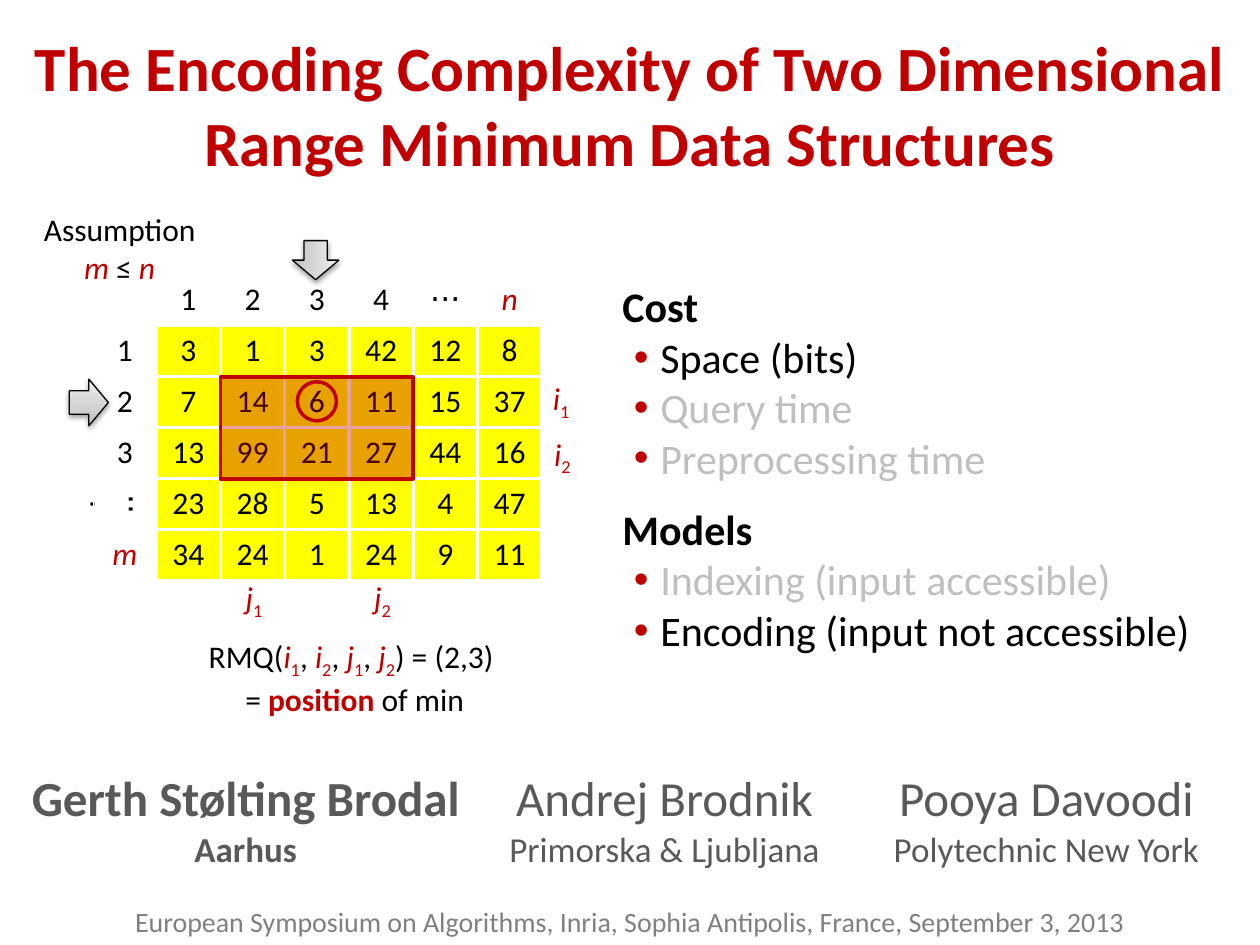
import lxml.etree
import pptx
import pptx.dml.color
import pptx.enum.shapes
import pptx.enum.text
import pptx.oxml
import pptx.oxml.ns
import pptx.util

Inches = pptx.util.Inches
Pt = pptx.util.Pt
SHAPE = pptx.enum.shapes.MSO_SHAPE
ALIGN = pptx.enum.text.PP_ALIGN
NAMESPACE = pptx.oxml.ns.nsdecls("a")

FONT = "Calibri"
RED, BLACK, WHITE, YELLOW = "C00000", "000000", "FFFFFF", "FFFF00"
GREY, DARK_GREY = "808080", "595959"

GRID_LEFT, GRID_TOP = 0.74, 2.18
LABEL_WIDTH, CELL_WIDTH, CELL_HEIGHT = 0.5, 0.51, 0.405
MATRIX = [
    ["", "1", "2", "3", "4", "⋅⋅⋅", "n"],
    ["1", "3", "1", "3", "42", "12", "8"],
    ["2", "7", "14", "6", "11", "15", "37"],
    ["3", "13", "99", "21", "27", "44", "16"],
    ["⋅⋅⋅", "23", "28", "5", "13", "4", "47"],
    ["m", "34", "24", "1", "24", "9", "11"],
]
AUTHORS = [
    ["Gerth Stølting Brodal", "Andrej Brodnik", "Pooya Davoodi"],
    ["Aarhus", "Primorska & Ljubljana", "Polytechnic New York"],
]
TOPICS = {
    "Cost": ["Space (bits)", "Query time", "Preprocessing time"],
    "Models": ["Indexing (input accessible)", "Encoding (input not accessible)"],
}


def rgb(color):
    return pptx.dml.color.RGBColor.from_string(color)


def box(left, top, width, height):
    return Inches(left), Inches(top), Inches(width), Inches(height)


def append_xml(parent, markup):
    parent.append(pptx.oxml.parse_xml(markup.replace(">", f" {NAMESPACE}>", 1)))


def format_run(run, size, color, bold=False, italic=False):
    font = run.font
    font.name, font.size = FONT, Pt(size)
    font.bold, font.italic = bold, italic
    font.color.rgb = rgb(color)


def write_line(paragraph, text, size, color, bold=False, italic=False, align=ALIGN.CENTER):
    paragraph.text = text
    paragraph.alignment = align
    format_run(paragraph.runs[0], size, color, bold, italic)


def write_formula(paragraph, pieces, align=ALIGN.CENTER):
    """Write (text, role) pieces; the roles are plain, var, sub and strong."""
    paragraph.alignment = align
    for text, role in pieces:
        run = paragraph.add_run()
        run.text = text
        format_run(run, 18, BLACK if role == "plain" else RED, role == "strong", role == "var")
        if role == "sub":
            run.font._element.set("baseline", "-25000")


def indexed(name, index):
    return [(name, "var"), (index, "sub")]


def add_text(slide, *place):
    frame = slide.shapes.add_textbox(*box(*place)).text_frame
    frame.word_wrap = True
    return frame


def add_formula(slide, place, lines, align=ALIGN.CENTER):
    frame = add_text(slide, *place)
    for number, pieces in enumerate(lines):
        paragraph = frame.add_paragraph() if number else frame.paragraphs[0]
        write_formula(paragraph, pieces, align)


def add_plain_table(slide, place, rows, widths, heights):
    table = slide.shapes.add_table(len(rows), len(rows[0]), *box(*place)).table
    table.first_row = table.horz_banding = False
    for column, width in zip(table.columns, widths):
        column.width = Inches(width)
    for row, height in zip(table.rows, heights):
        row.height = Inches(height)
    for cell in table.iter_cells():
        cell.fill.background()
    return table


def add_borders(cell, color, width):
    """Put the four border lines ahead of the cell's fill, as the schema asks."""
    properties = cell._tc.get_or_add_tcPr()
    for position, side in enumerate(("lnL", "lnR", "lnT", "lnB")):
        properties.insert(position, pptx.oxml.parse_xml(
            f'<a:{side} {NAMESPACE} w="{Pt(width)}"><a:solidFill>'
            f'<a:srgbClr val="{color}"/></a:solidFill></a:{side}>'))


def add_matrix(slide):
    widths = [LABEL_WIDTH] + [CELL_WIDTH] * 6
    heights = [CELL_HEIGHT] * len(MATRIX)
    table = add_plain_table(
        slide, (GRID_LEFT, GRID_TOP, sum(widths), sum(heights)), MATRIX, widths, heights)
    for r, row in enumerate(MATRIX):
        for c, entry in enumerate(row):
            cell = table.cell(r, c)
            if r and c:
                cell.fill.solid()
                cell.fill.fore_color.rgb = rgb(YELLOW)
                add_borders(cell, WHITE, 2.25)
            if entry:
                is_size = entry in ("m", "n")
                write_line(cell.text_frame.paragraphs[0], entry, 18,
                           RED if is_size else BLACK, italic=is_size)
    table.cell(4, 0)._tc.get_or_add_tcPr().set("vert", "vert")


def add_authors(slide):
    widths, heights = [3.82, 2.83, 3.23], [0.45, 0.41]
    table = add_plain_table(slide, (0.04, 6.11, sum(widths), sum(heights)),
                            AUTHORS, widths, heights)
    for r, (row, size) in enumerate(zip(AUTHORS, (28, 20))):
        for c, entry in enumerate(row):
            cell = table.cell(r, c)
            cell.margin_left = cell.margin_right = cell.margin_top = cell.margin_bottom = 0
            write_line(cell.text_frame.paragraphs[0], entry, size, DARK_GREY, bold=c == 0)


def add_figure(slide, preset, place, fill=None, alpha=100, line=None):
    figure = slide.shapes.add_shape(preset, *box(*place))
    figure.shadow.inherit = False
    if fill:
        figure.fill.solid()
        figure.fill.fore_color.rgb = rgb(fill)
        color = figure.fill._xPr.find(".//" + pptx.oxml.ns.qn("a:srgbClr"))
        append_xml(color, f'<a:alpha val="{alpha * 1000}"></a:alpha>')
    else:
        figure.fill.background()
    if line:
        figure.line.color.rgb = rgb(line)
        figure.line.width = Pt(2)
    else:
        figure.line.fill.background()


def add_pointer(slide, left, top, rotation=0):
    pointer = slide.shapes.add_shape(SHAPE.RIGHT_ARROW, *box(left, top, 0.31, 0.37))
    pointer.rotation = rotation
    properties = pointer._element.spPr
    stops = "".join(f'<a:gs pos="{pos * 1000}"><a:srgbClr val="{color}"/></a:gs>'
                    for pos, color in ((0, "BDBDBD"), (35, "D1D1D1"), (100, "EEEEEE")))
    append_xml(properties, f'<a:gradFill rotWithShape="1"><a:gsLst>{stops}</a:gsLst>'
                           '<a:lin ang="16200000" scaled="1"/></a:gradFill>')
    pointer.line.color.rgb = rgb(BLACK)
    pointer.line.width = Pt(0.75)
    append_xml(properties, f'<a:effectLst><a:outerShdw blurRad="{Pt(3.1)}" dist="{Pt(1.6)}" '
                           'dir="5400000" rotWithShape="0"><a:srgbClr val="000000">'
                           '<a:alpha val="38000"/></a:srgbClr></a:outerShdw></a:effectLst>')


def fill_title(title):
    title.left, title.top, title.width, title.height = box(0, 0.02, 10, 1.61)
    title.text_frame.auto_size = pptx.enum.text.MSO_AUTO_SIZE.NONE
    write_line(title.text_frame.paragraphs[0],
               "The Encoding Complexity of Two Dimensional Range Minimum Data Structures",
               36, RED, bold=True)


def fill_topics(body):
    body.left, body.top, body.width, body.height = box(4.84, 2.18, 5.04, 3.22)
    frame = body.text_frame
    frame.auto_size = pptx.enum.text.MSO_AUTO_SIZE.NONE
    lines = [(text, text == heading)
             for heading, items in TOPICS.items() for text in [heading, *items]]
    for number, (text, is_heading) in enumerate(lines):
        paragraph = frame.add_paragraph() if number else frame.paragraphs[0]
        write_line(paragraph, text, 24, BLACK, bold=is_heading, align=ALIGN.LEFT)
        paragraph.space_before = Pt(0)
        paragraph.space_after = Pt(12 if text == TOPICS["Cost"][-1] else 0)
        properties = paragraph._p.get_or_add_pPr()
        properties.set("marL", str(Inches(0.3)))
        properties.set("indent", str(Inches(-0.3 if is_heading else -0.21)))
        if is_heading:
            append_xml(properties, "<a:buNone></a:buNone>")
        else:
            append_xml(properties, f'<a:buClr><a:srgbClr val="{RED}"/></a:buClr>')
            append_xml(properties, '<a:buFont typeface="Arial"></a:buFont>')
            append_xml(properties, '<a:buChar char="•"></a:buChar>')


def add_footer(slide):
    frame = add_text(slide, 0, 7.18, 10, 0.27)
    frame.margin_left = frame.margin_right = frame.margin_top = frame.margin_bottom = 0
    write_line(frame.paragraphs[0], "European Symposium on Algorithms, Inria, "
               "Sophia Antipolis, France, September 3, 2013", 16, GREY)


def main():
    deck = pptx.Presentation()
    deck.slide_width, deck.slide_height = Inches(10), Inches(7.5)
    slide = deck.slides.add_slide(deck.slide_layouts[1])
    fill_title(slide.shapes.title)
    fill_topics(slide.placeholders[1])
    add_footer(slide)
    add_matrix(slide)
    add_figure(slide, SHAPE.RECTANGLE, (GRID_LEFT + LABEL_WIDTH + CELL_WIDTH,
               GRID_TOP + 2 * CELL_HEIGHT, 3 * CELL_WIDTH, 2 * CELL_HEIGHT), RED, 37, RED)
    for name, index, left, top in (("i", "1", 4.29, 2.96), ("i", "2", 4.3, 3.4),
                                   ("j", "2", 2.87, 4.54), ("j", "1", 1.85, 4.54)):
        add_formula(slide, (left, top, 0.38, 0.4), [indexed(name, index)], ALIGN.LEFT)
    add_authors(slide)
    comma = (", ", "plain")
    add_formula(slide, (1.5, 5.01, 2.63, 0.71), [
        [("RMQ(", "plain"), *indexed("i", "1"), comma, *indexed("i", "2"), comma,
         *indexed("j", "1"), comma, *indexed("j", "2"), (") = (2,3) ", "plain")],
        [("= ", "plain"), ("position ", "strong"), ("of min", "plain")]])
    add_figure(slide, SHAPE.OVAL, (2.36, 3.03, 0.31, 0.31), line=RED)
    add_pointer(slide, 0.55, 3.01)
    add_pointer(slide, 2.35, 1.88, rotation=90)
    add_formula(slide, (0.21, 1.62, 1.48, 0.71), [
        [("Assumption", "plain")], [("m", "var"), (" ≤ ", "plain"), ("n", "var")]])
    for veil in ((5.21, 3.12, 2.68, 0.74), (5.24, 4.43, 3.94, 0.35)):
        add_figure(slide, SHAPE.RECTANGLE, veil, WHITE, 75)
    deck.save("out.pptx")


if __name__ == "__main__":
    main()
